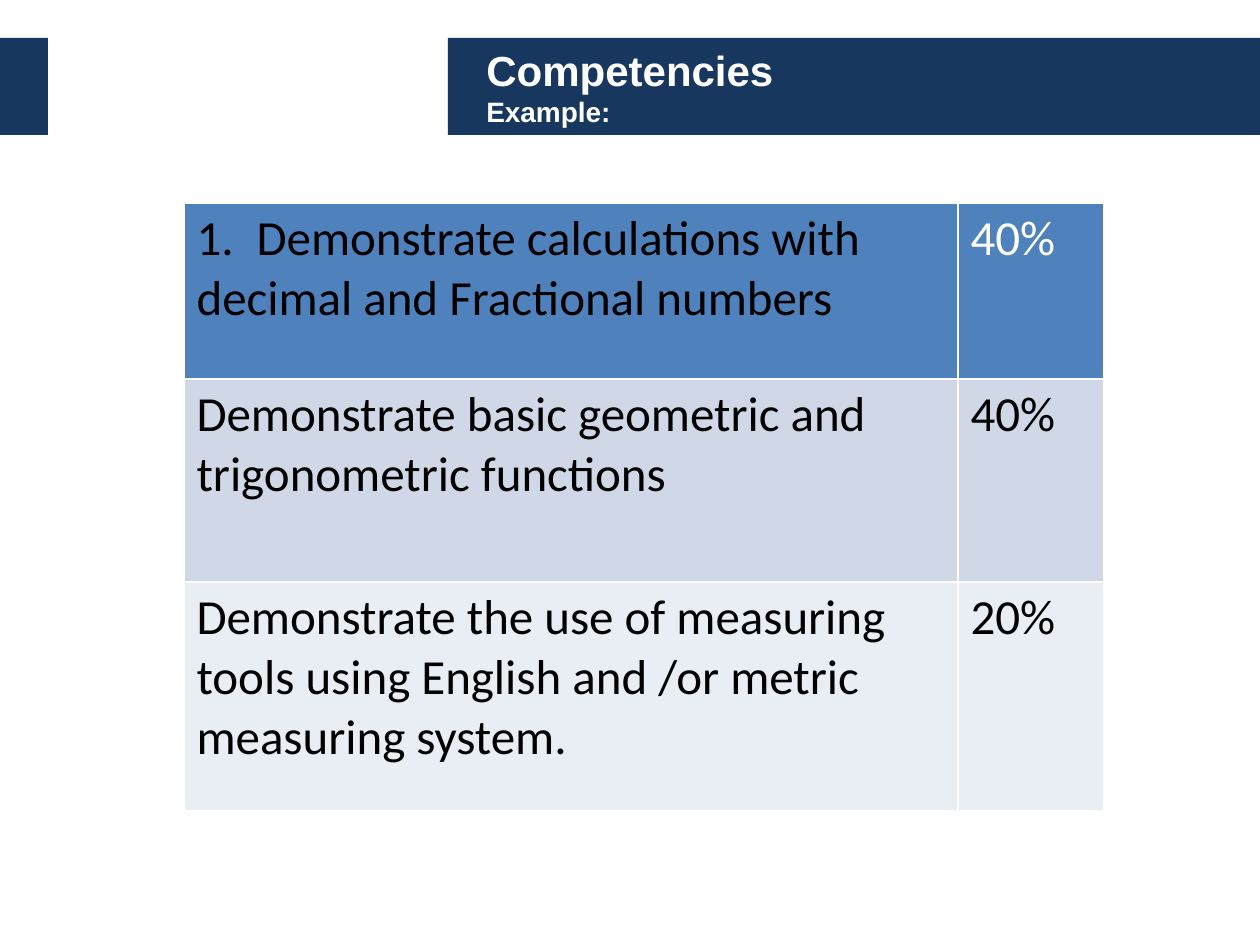
"""Build the competencies slide with its weighted table."""
from dataclasses import dataclass

from lxml.etree import SubElement
from pptx import Presentation
from pptx.dml.color import RGBColor as Color
from pptx.enum.shapes import MSO_SHAPE as Shape
from pptx.enum.text import MSO_ANCHOR as Anchor
from pptx.oxml.ns import qn
from pptx.util import Pt


@dataclass(frozen=True)
class Theme:
    navy: str = "17375E"
    white: str = "FFFFFF"
    black: str = "000000"
    header: str = "4F81BD"
    band: str = "D0D8E8"
    light: str = "E9EDF4"
    title_font: str = "Arial"
    body_font: str = "Calibri"
    title_size: int = 24
    subtitle_size: int = 16
    body_size: int = 28


theme = Theme()
PX = 914400 // 126
NUMBER_TAB = 60


def write(paragraph, text, *, font, size, color, bold=False):
    run = paragraph.add_run()
    run.text = text
    run.font.name = font
    run.font.size = Pt(size)
    run.font.bold = bold
    run.font.color.rgb = Color.from_string(color)


presentation = Presentation()
presentation.slide_width = 1260 * PX
presentation.slide_height = 945 * PX
slide = presentation.slides.add_slide(presentation.slide_layouts[6])

bar_top, bar_height = 38, 97
for left, width in [(448, 812), (0, 48)]:
    bar = slide.shapes.add_shape(
        Shape.RECTANGLE, left * PX, bar_top * PX, width * PX, bar_height * PX
    )
    bar.shadow.inherit = False
    bar.fill.solid()
    bar.fill.fore_color.rgb = Color.from_string(theme.navy)
    bar.line.fill.background()

title = slide.shapes.add_textbox(474 * PX, bar_top * PX, 723 * PX, bar_height * PX)
title.text_frame.word_wrap = True
title.text_frame.vertical_anchor = Anchor.MIDDLE
title_lines = [("Competencies", theme.title_size), ("Example:", theme.subtitle_size)]
paragraph = title.text_frame.paragraphs[0]
for index, (text, size) in enumerate(title_lines):
    if index:
        paragraph.add_line_break()
    write(paragraph, text, font=theme.title_font, size=size, color=theme.white, bold=True)

competencies = [
    ("1.\tDemonstrate calculations with decimal and Fractional numbers", "40%",
     176, theme.header, theme.white),
    ("Demonstrate basic geometric and trigonometric functions", "40%",
     203, theme.band, theme.black),
    ("Demonstrate the use of measuring tools using English and /or metric measuring system.",
     "20%", 229, theme.light, theme.black),
]
column_widths = [774, 146]
table_height = sum(row[2] for row in competencies)
table = slide.shapes.add_table(
    len(competencies), len(column_widths),
    184 * PX, 203 * PX, sum(column_widths) * PX, table_height * PX,
).table
for column, width in zip(table.columns, column_widths):
    column.width = width * PX

for row_index, (competency, weight, height, fill, weight_color) in enumerate(competencies):
    table.rows[row_index].height = height * PX
    row_texts = [(competency, theme.black), (weight, weight_color)]
    for column_index, (text, color) in enumerate(row_texts):
        cell = table.cell(row_index, column_index)
        cell.fill.solid()
        cell.fill.fore_color.rgb = Color.from_string(fill)
        paragraph = cell.text_frame.paragraphs[0]
        if "\t" in text:
            tabs = SubElement(paragraph._p.get_or_add_pPr(), qn("a:tabLst"))
            SubElement(tabs, qn("a:tab"), pos=str(NUMBER_TAB * PX), algn="l")
        write(paragraph, text, font=theme.body_font, size=theme.body_size, color=color)

presentation.save("out.pptx")
